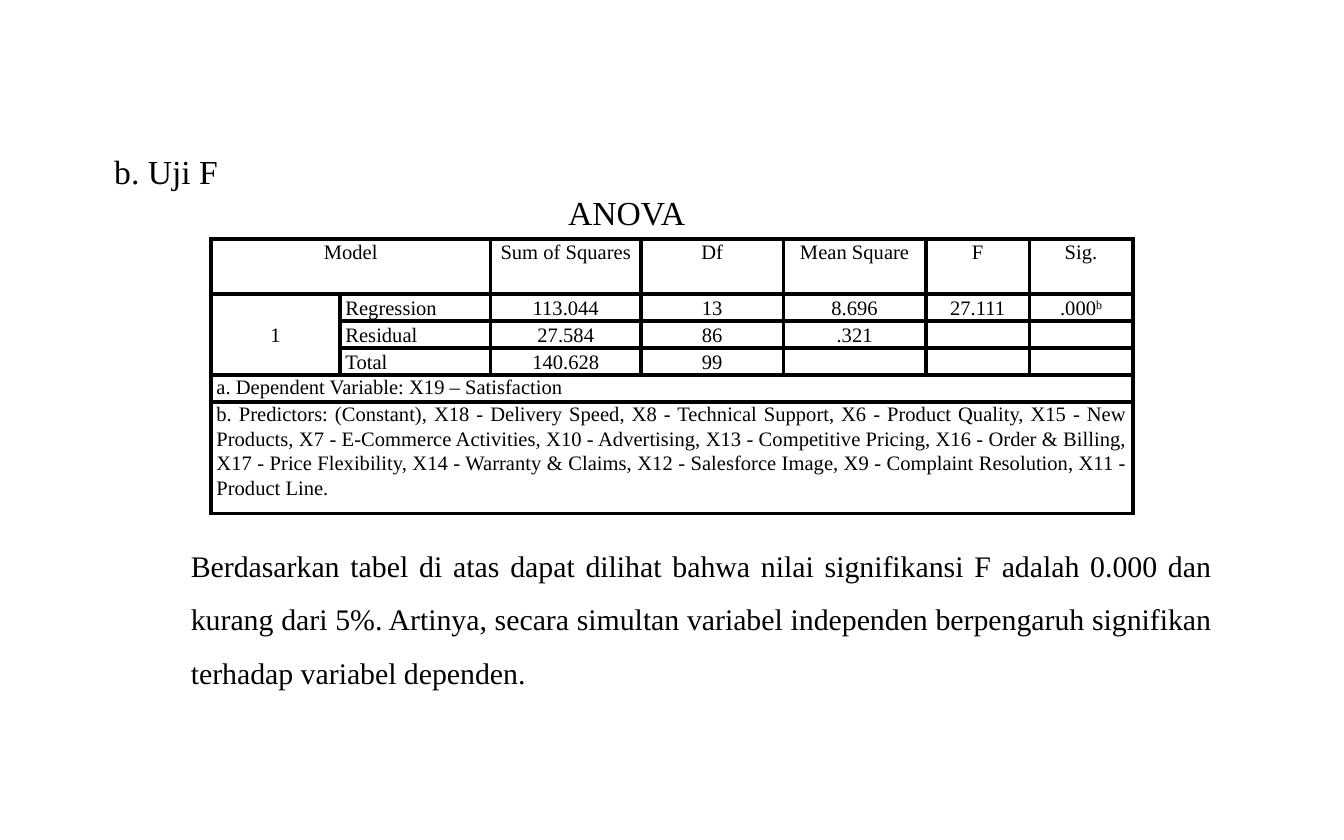
from lxml import etree
from pptx import Presentation
from pptx.dml.color import RGBColor
from pptx.enum.text import MSO_ANCHOR, MSO_AUTO_SIZE, PP_ALIGN
from pptx.oxml.ns import qn
from pptx.util import Inches, Pt

LEFT, MID, JUST = PP_ALIGN.LEFT, PP_ALIGN.CENTER, PP_ALIGN.JUSTIFY
TOP, CENTER = MSO_ANCHOR.TOP, MSO_ANCHOR.MIDDLE
BLACK = RGBColor(0, 0, 0)
FONT = "Times New Roman"

COLS = [0.96, 1.12, 1.12, 1.06, 1.06, 0.77, 0.77]
ROWS = [0.41, 0.2, 0.2, 0.2, 0.2, 0.83]
DATA = [
    ["Model", "", "Sum of Squares", "Df", "Mean Square", "F", "Sig."],
    ["1", "Regression", "113.044", "13", "8.696", "27.111", ".000"],
    ["", "Residual", "27.584", "86", ".321", "", ""],
    ["", "Total", "140.628", "99", "", "", ""],
    ["a. Dependent Variable: X19 – Satisfaction"],
    ["b. Predictors: (Constant), X18 - Delivery Speed, X8 - Technical Support, "
     "X6 - Product Quality, X15 - New Products, X7 - E-Commerce Activities, "
     "X10 - Advertising, X13 - Competitive Pricing, X16 - Order & Billing, "
     "X17 - Price Flexibility, X14 - Warranty & Claims, X12 - Salesforce Image, "
     "X9 - Complaint Resolution, X11 - Product Line."],
]
# Merged areas: first row, first column, last row, last column
SPANS = [(0, 0, 0, 1), (1, 0, 3, 0), (4, 0, 4, 6), (5, 0, 5, 6)]
NOTE = ("Berdasarkan tabel di atas dapat dilihat bahwa nilai signifikansi F adalah "
        "0.000 dan kurang dari 5%. Artinya, secara simultan variabel independen "
        "berpengaruh signifikan terhadap variabel dependen.")


def write(frame, text, size=18, align=LEFT, line=1.5, pad=0, sup=""):
    """Fill a text frame with one paragraph; sup is a raised suffix."""
    para = frame.paragraphs[0]
    props = para._p.get_or_add_pPr()
    props.set("marL", str(Inches(pad)))
    props.set("marR", str(Inches(pad)))
    props.set("indent", "0")
    para.alignment = align
    para.line_spacing = line
    para.space_before = Pt(0)
    para.space_after = Pt(8)
    etree.SubElement(props, qn("a:buNone"))
    for part in filter(None, (text, sup)):
        run = para.add_run()
        run.text = part
        run.font.size = Pt(size)
        run.font.name = FONT
        run.font.color.rgb = BLACK
    if sup:
        run.font._element.set("baseline", "30000")


def place(shape, left, top, width, height):
    """Move a text shape and set up its frame."""
    shape.left, shape.top = Inches(left), Inches(top)
    shape.width, shape.height = Inches(width), Inches(height)
    frame = shape.text_frame
    frame.word_wrap = True
    frame.auto_size = MSO_AUTO_SIZE.SHAPE_TO_FIT_TEXT
    frame.vertical_anchor = TOP
    return frame


def edge(cell):
    """Draw the four black borders of a cell."""
    props = cell._tc.get_or_add_tcPr()
    for side in ("lnL", "lnR", "lnT", "lnB"):
        line = etree.SubElement(props, qn(f"a:{side}"), w=str(Pt(2.25)))
        fill = etree.SubElement(line, qn("a:solidFill"))
        etree.SubElement(fill, qn("a:srgbClr"), val=str(BLACK))


def add_grid(slide):
    """Add the ANOVA table."""
    grid = slide.shapes.add_table(
        len(ROWS), len(COLS), Inches(1.57), Inches(1.78),
        Inches(sum(COLS)), Inches(sum(ROWS))).table
    grid.first_row = grid.horz_banding = False
    for col, width in zip(grid.columns, COLS):
        col.width = Inches(width)
    for row, height in zip(grid.rows, ROWS):
        row.height = Inches(height)

    for r in range(len(ROWS)):
        for c in range(len(COLS)):
            cell = grid.cell(r, c)
            edge(cell)
            cell.fill.background()
            cell.margin_left = cell.margin_right = 0
            cell.margin_top = cell.margin_bottom = 0
            cell.vertical_anchor = CENTER if 1 <= r <= 3 else TOP
            text = DATA[r][c] if c < len(DATA[r]) else ""
            if text:
                align = JUST if r == 5 else LEFT if r == 4 or (r and c == 1) else MID
                write(cell.text_frame, text, size=11, align=align, line=1.07,
                      pad=0.04, sup="b" if text == ".000" else "")
            else:
                # Keep empty cells as low as their row
                end = cell.text_frame.paragraphs[0]._p.get_or_add_endParaRPr()
                end.set("sz", "1100")

    for top, left, low, right in SPANS:
        grid.cell(top, left).merge(grid.cell(low, right))


def main():
    deck = Presentation()
    deck.slide_width, deck.slide_height = Inches(10), Inches(6.25)
    slide = deck.slides.add_slide(deck.slide_layouts[1])
    title, body = slide.placeholders

    # Heading
    write(place(title, 0.75, 0.92, 5, 0.51), "b. Uji F")

    # Table and its caption
    add_grid(slide)
    label = slide.shapes.add_textbox(0, 0, 0, 0)
    write(place(label, 4.13, 1.23, 5, 0.51), "ANOVA")

    # Conclusion
    write(place(body, 1.32, 3.89, 7.8, 1.27), NOTE, size=16, align=JUST)

    deck.save("out.pptx")


if __name__ == "__main__":
    main()
